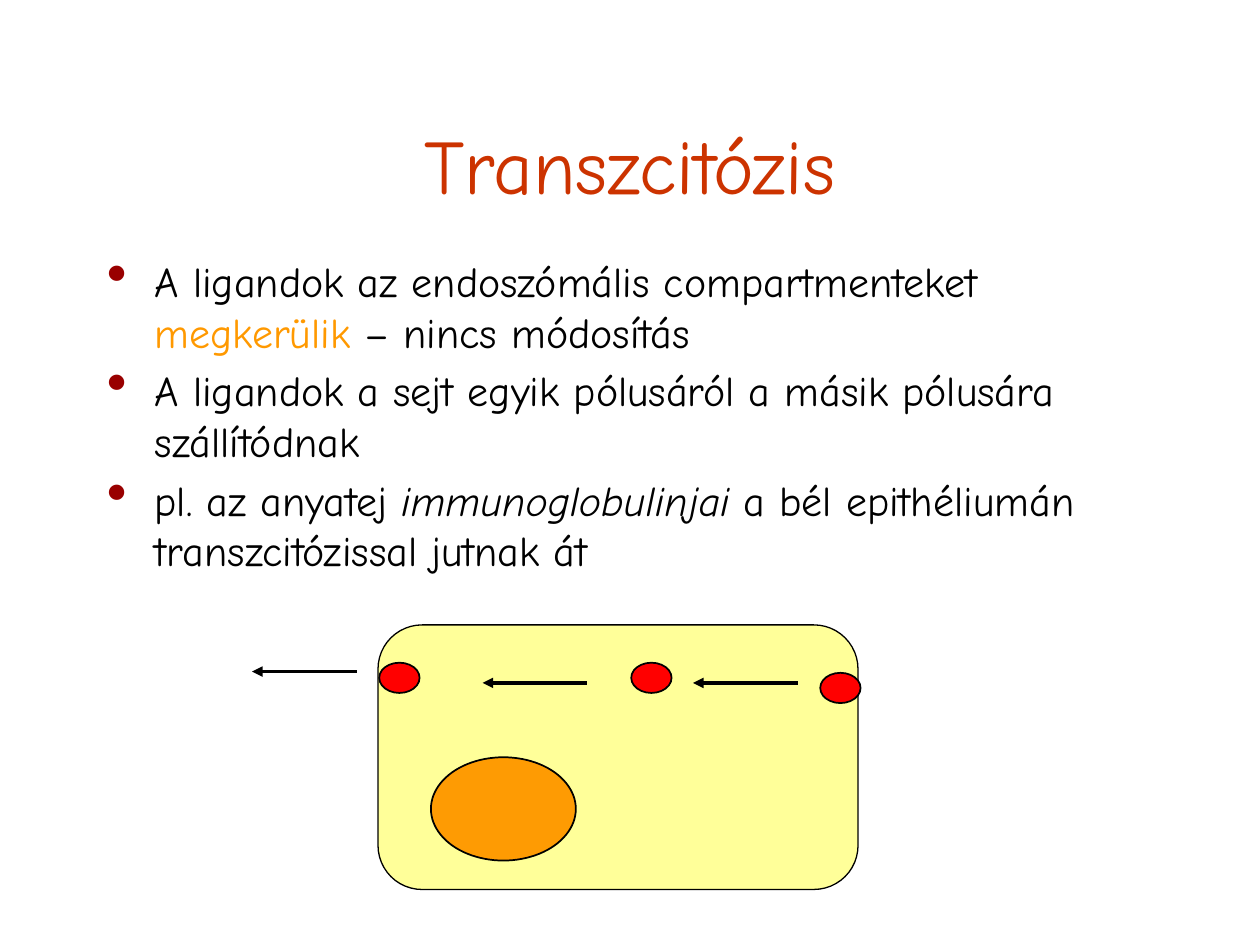
from lxml.etree import SubElement
from pptx import Presentation
from pptx.dml.color import RGBColor
from pptx.enum.shapes import MSO_CONNECTOR, MSO_SHAPE
from pptx.enum.text import MSO_ANCHOR, PP_ALIGN
from pptx.oxml.ns import qn
from pptx.util import Inches, Pt

FONT = "Comic Neue"
COLORS = {
    "title": "CC3300",
    "text": "000000",
    "accent": "FF9900",
    "bullet": "990000",
    "cell": "FFFF99",
    "nucleus": "FE9B03",
    "vesicle": "FF0000",
    "outline": "000000",
}

# Each statement is a list of (text, color key, italic) pieces
STATEMENTS = [
    [("A ligandok az endoszómális compartmenteket ", "text", False),
     ("megkerülik", "accent", False),
     (" – nincs módosítás", "text", False)],
    [("A ligandok a sejt egyik pólusáról a másik pólusára szállítódnak",
      "text", False)],
    [("pl. az anyatej ", "text", False),
     ("immunoglobulinjai", "text", True),
     (" a bél epithéliumán transzcitózissal jutnak át", "text", False)],
]

VESICLE_SIZE = (0.32, 0.24)
VESICLES = [(6.51, 5.34), (5.01, 5.26), (3.01, 5.26)]
ARROW_LENGTH = 0.83
ARROW_TIPS = [(5.5, 5.42), (3.83, 5.42), (2, 5.33)]


def rgb(key):
    return RGBColor.from_string(COLORS[key])


def apply_format(target, values):
    for name, value in values.items():
        setattr(target, name, value)


def add_text_frame(slide, box, anchor):
    frame = slide.shapes.add_textbox(*map(Inches, box)).text_frame
    apply_format(frame, {
        "word_wrap": True, "vertical_anchor": anchor,
        "margin_left": Inches(0.1), "margin_right": Inches(0.1),
        "margin_top": Inches(0.05), "margin_bottom": Inches(0.05),
    })
    return frame


def add_run(paragraph, text, size, color, italic=False):
    run = paragraph.add_run()
    run.text = text
    apply_format(run.font, {"name": FONT, "size": Pt(size), "italic": italic})
    run.font.color.rgb = rgb(color)


def set_bullet(paragraph):
    props = paragraph._p.get_or_add_pPr()
    props.set("marL", str(Inches(0.38)))
    props.set("indent", str(-Inches(0.38)))
    color = SubElement(props, qn("a:buClr"))
    SubElement(color, qn("a:srgbClr"), val=COLORS["bullet"])
    SubElement(props, qn("a:buSzPct"), val="140000")
    SubElement(props, qn("a:buChar"), char="•")


def add_title(slide, text):
    frame = add_text_frame(slide, (0.75, 0.67, 8.5, 1.25), MSO_ANCHOR.MIDDLE)
    heading = frame.paragraphs[0]
    heading.alignment = PP_ALIGN.CENTER
    add_run(heading, text, 44, "title")


def add_statements(slide, statements):
    frame = add_text_frame(slide, (0.75, 1.98, 8.5, 4.5), MSO_ANCHOR.TOP)
    for index, pieces in enumerate(statements):
        statement = frame.add_paragraph() if index else frame.paragraphs[0]
        statement.space_before = Pt(4.8)
        set_bullet(statement)
        for text, color, italic in pieces:
            add_run(statement, text, 24, color, italic)


def add_body(slide, kind, box, fill, line_width=1):
    body = slide.shapes.add_shape(kind, *map(Inches, box))
    body.shadow.inherit = False
    body.fill.solid()
    body.fill.fore_color.rgb = rgb(fill)
    body.line.color.rgb = rgb("outline")
    body.line.width = Pt(line_width)


def add_left_arrow(slide, tip_x, y):
    arrow = slide.shapes.add_connector(
        MSO_CONNECTOR.STRAIGHT,
        *map(Inches, (tip_x, y, tip_x + ARROW_LENGTH, y)))
    arrow.line.color.rgb = rgb("outline")
    arrow.line.width = Pt(2)
    SubElement(arrow.line._get_or_add_ln(), qn("a:headEnd"), type="triangle")
    SubElement(arrow._element.spPr, qn("a:effectLst"))


def main():
    prs = Presentation()
    apply_format(prs, {"slide_width": Inches(10), "slide_height": Inches(7.5)})
    slide = prs.slides.add_slide(prs.slide_layouts[6])

    # Text
    add_title(slide, "Transzcitózis")
    add_statements(slide, STATEMENTS)

    # Cell with its nucleus
    add_body(slide, MSO_SHAPE.ROUNDED_RECTANGLE, (3, 4.96, 3.81, 2.1),
             "cell", 0.75)
    add_body(slide, MSO_SHAPE.OVAL, (3.42, 6.01, 1.15, 0.82), "nucleus")

    # Vesicles crossing the cell from right to left
    for position in VESICLES:
        add_body(slide, MSO_SHAPE.OVAL, position + VESICLE_SIZE, "vesicle")
    for tip in ARROW_TIPS:
        add_left_arrow(slide, *tip)

    prs.save("out.pptx")


if __name__ == "__main__":
    main()
